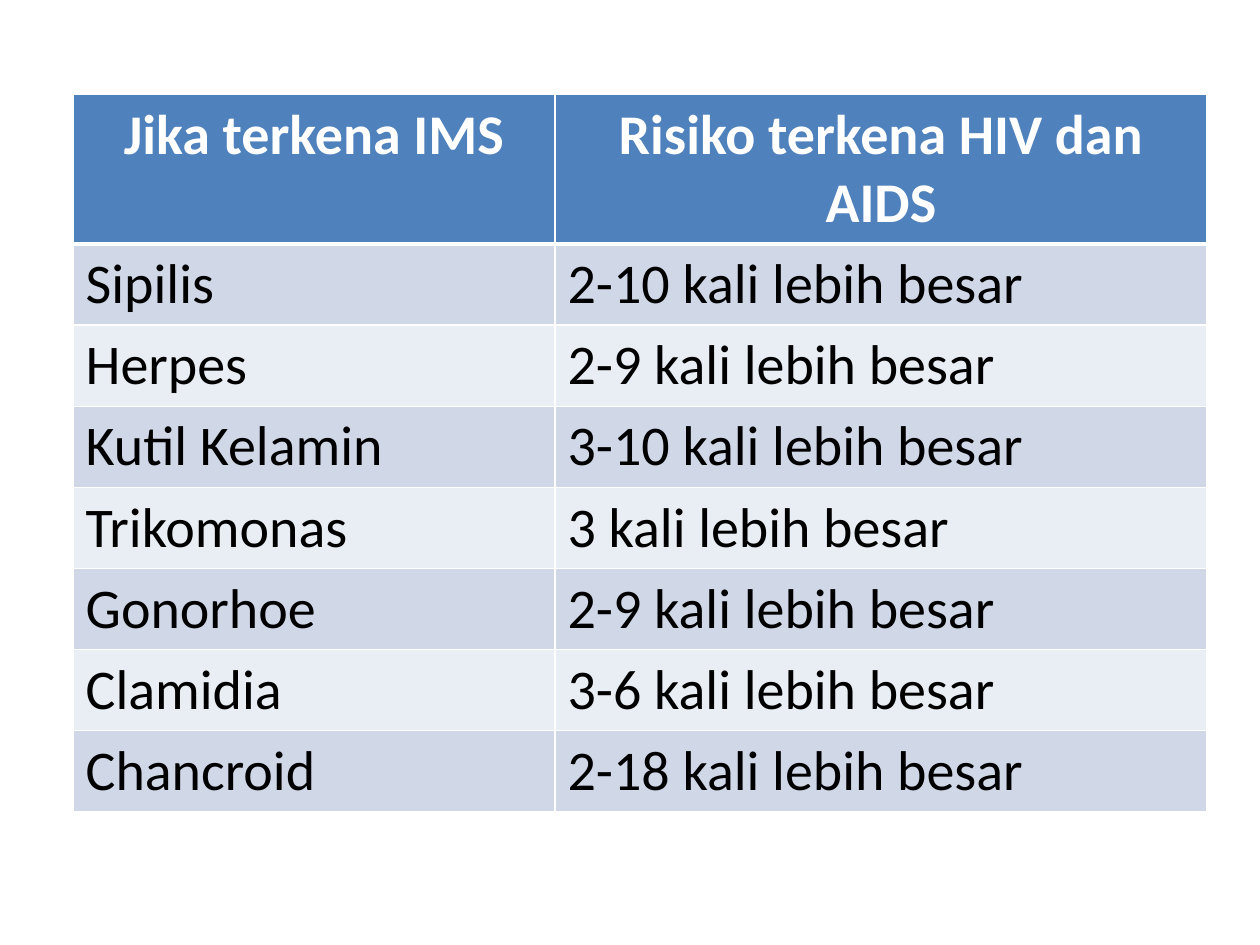
from lxml.etree import SubElement
from pptx import Presentation
from pptx.dml.color import RGBColor
from pptx.enum.text import PP_ALIGN as Align
from pptx.oxml.ns import qn
from pptx.util import Inches, Pt

W, H = 10, 7.5
WHITE, BLACK, BLUE = "FFFFFF", "000000", "4F81BD"
BANDS = ("D0D8E8", "E9EDF4")
ROWS = [
    ("Jika terkena IMS", "Risiko terkena HIV dan AIDS"),
    ("Sipilis", "2-10 kali lebih besar"),
    ("Herpes", "2-9 kali lebih besar"),
    ("Kutil Kelamin", "3-10 kali lebih besar"),
    ("Trikomonas", "3 kali lebih besar"),
    ("Gonorhoe", "2-9 kali lebih besar"),
    ("Clamidia", "3-6 kali lebih besar"),
    ("Chancroid", "2-18 kali lebih besar"),
]


def rgb(value):
    """Return the colour for a hex string."""
    return RGBColor.from_string(value)


def set_borders(cell, **widths):
    """Draw white cell borders, given in points by side."""
    tc_pr = cell._tc.get_or_add_tcPr()
    for side in "LRTB":
        ln = SubElement(tc_pr, qn(f"a:ln{side}"), w=str(Pt(widths.get(side, 1))))
        fill = SubElement(ln, qn("a:solidFill"))
        SubElement(fill, qn("a:srgbClr"), val=WHITE)


def fill_cell(cell, text, row):
    """Style and write one cell of the header or of a banded row."""
    header = row == 0
    set_borders(cell, T=3 if row == 1 else 1, B=3 if header else 1)
    cell.fill.solid()
    cell.fill.fore_color.rgb = rgb(BLUE if header else BANDS[(row - 1) % 2])
    p = cell.text_frame.paragraphs[0]
    if header:
        p.alignment = Align.CENTER
    r = p.add_run()
    r.text = text
    r.font.name, r.font.size, r.font.bold = "Calibri", Pt(32), header
    r.font.color.rgb = rgb(WHITE if header else BLACK)


def add_risk_table(s, left, top, width, height):
    """Place the table of infections and HIV risk in the given box."""
    box = [Inches(v) for v in (left, top, width, height)]
    frame = s.shapes.add_table(len(ROWS), 2, *box)
    table = frame.table
    for column, share in zip(table.columns, (0.425, 0.575)):
        column.width = Inches(width * share)
    for i, texts in enumerate(ROWS):
        table.rows[i].height = Inches(0.41)
        for j, text in enumerate(texts):
            fill_cell(table.cell(i, j), text, i)
    frame.height = Inches(height)


def main():
    """Build and save the slide."""
    prs = Presentation()
    prs.slide_width, prs.slide_height = Inches(W), Inches(H)
    s = prs.slides.add_slide(prs.slide_layouts[6])
    add_risk_table(s, 0.058 * W, 0.1 * H, 0.9 * W, 0.747 * H)
    prs.save("out.pptx")


if __name__ == "__main__":
    main()
